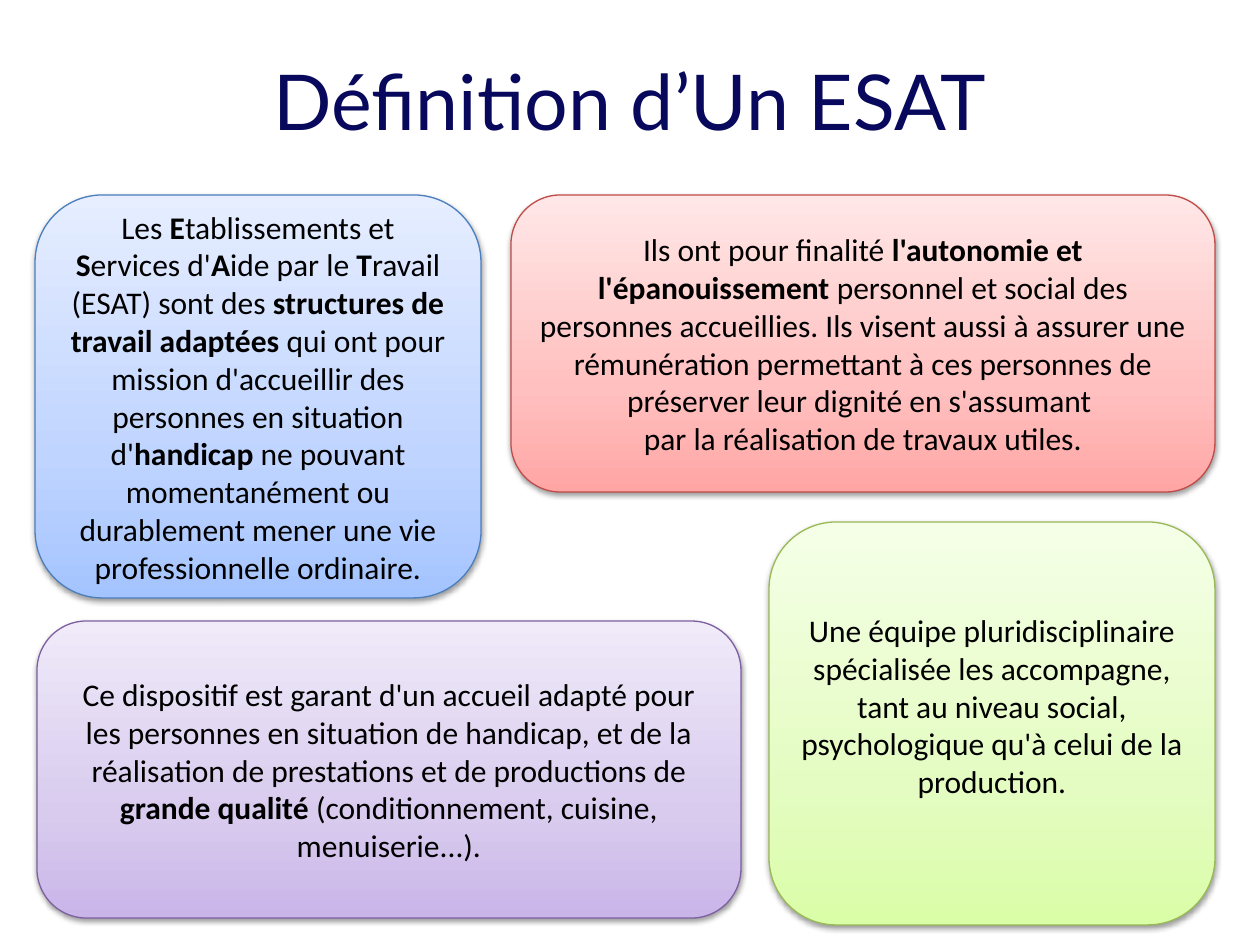
from copy import deepcopy

from lxml import etree
from pptx import Presentation
from pptx import util as u
from pptx.dml.color import RGBColor
from pptx.enum import shapes, text
from pptx.oxml.ns import qn

PX = 914400 / 126
COLORS = {
    "title": "08095C",
    "text": "000000",
    "shadow": "000000",
    "green": ("98B955", "DAFDA7", "E4FCC2", "F5FFE7"),
    "blue": ("4B7EBC", "A4C4FF", "BFD4FF", "E6EEFF"),
    "red": ("BF4C48", "FFA6A5", "FFC0BF", "FFE7E7"),
    "purple": ("7D60A0", "C9B5E8", "D8CBEE", "F0EAF9"),
}


def write(frame, content, *, font="Calibri", size=18, color="text"):
    """Fill a frame, one paragraph a line; words between ** are bold."""
    frame.word_wrap = True
    frame.vertical_anchor = text.MSO_ANCHOR.MIDDLE
    for index, line in enumerate(content.split("\n")):
        paragraph = frame.add_paragraph() if index else frame.paragraphs[0]
        paragraph.alignment = text.PP_ALIGN.CENTER
        for part, words in enumerate(line.split("**")):
            run = paragraph.add_run()
            run.text = words
            run.font.name = font
            run.font.size = u.Pt(size)
            run.font.bold = part % 2 == 1
            run.font.color.rgb = RGBColor.from_string(COLORS[color])


def style(shape, line_color, *stop_colors):
    """Apply the outline, the upward three-stop gradient and the soft shadow."""
    shape.line.color.rgb = RGBColor.from_string(line_color)
    shape.line.width = u.Pt(0.75)
    shape.fill.gradient()
    shape.fill.gradient_angle = 90
    properties = shape._element.spPr
    stop_list = properties.find(".//" + qn("a:gsLst"))
    stop_list.insert(1, deepcopy(stop_list[0]))
    for stop, position, color in zip(shape.fill.gradient_stops, (0, 0.35, 1), stop_colors):
        stop.position = position
        stop.color.rgb = RGBColor.from_string(color)
    shape.shadow.inherit = False
    shadow = etree.SubElement(
        properties.find(qn("a:effectLst")), qn("a:outerShdw"),
        blurRad="40000", dist="20000", dir="5400000", rotWithShape="0")
    color = etree.SubElement(shadow, qn("a:srgbClr"), val=COLORS["shadow"])
    etree.SubElement(color, qn("a:alpha"), val="38000")


presentation = Presentation()
presentation.slide_width = int(1260 * PX)
presentation.slide_height = int(945 * PX)
slide = presentation.slides.add_slide(presentation.slide_layouts[5])

title = slide.shapes.title
title.left, title.top, title.width, title.height = [int(n * PX) for n in (0, 26, 1260, 147)]
write(title.text_frame, "Définition d’Un ESAT", font="Lato", size=44, color="title")

TALL = (446, 403)
WIDE = (704, 297)
# colour, left and top, size, bottom margin, wording
cards = [
    ("green", (769, 522), TALL, 42,
     "Une équipe pluridisciplinaire spécialisée les accompagne, tant au niveau social, "
     "psychologique qu'à celui de la production."),
    ("blue", (35, 195), TALL, 6,
     "Les **E**tablissements et **S**ervices d'**A**ide par le **T**ravail (ESAT) sont des "
     "**structures de travail adaptées** qui ont pour mission d'accueillir des personnes en "
     "situation d'**handicap** ne pouvant momentanément ou durablement mener une vie "
     "professionnelle ordinaire."),
    ("red", (511, 195), WIDE, 6,
     "Ils ont pour finalité **l'autonomie et l'épanouissement** personnel et social des "
     "personnes accueillies. Ils visent aussi à assurer une rémunération permettant à ces "
     "personnes de préserver leur dignité en s'assumant \n"
     "par la réalisation de travaux utiles."),
    ("purple", (37, 621), WIDE, 6,
     "Ce dispositif est garant d'un accueil adapté pour les personnes en situation de "
     "handicap, et de la réalisation de prestations et de productions de "
     "**grande qualité **(conditionnement, cuisine, menuiserie...)."),
]
for color, position, size, bottom_margin, content in cards:
    card = slide.shapes.add_shape(
        shapes.MSO_SHAPE.ROUNDED_RECTANGLE, *[int(n * PX) for n in position + size])
    style(card, *COLORS[color])
    card.text_frame.margin_bottom = int(bottom_margin * PX)
    write(card.text_frame, content)

presentation.save("out.pptx")
